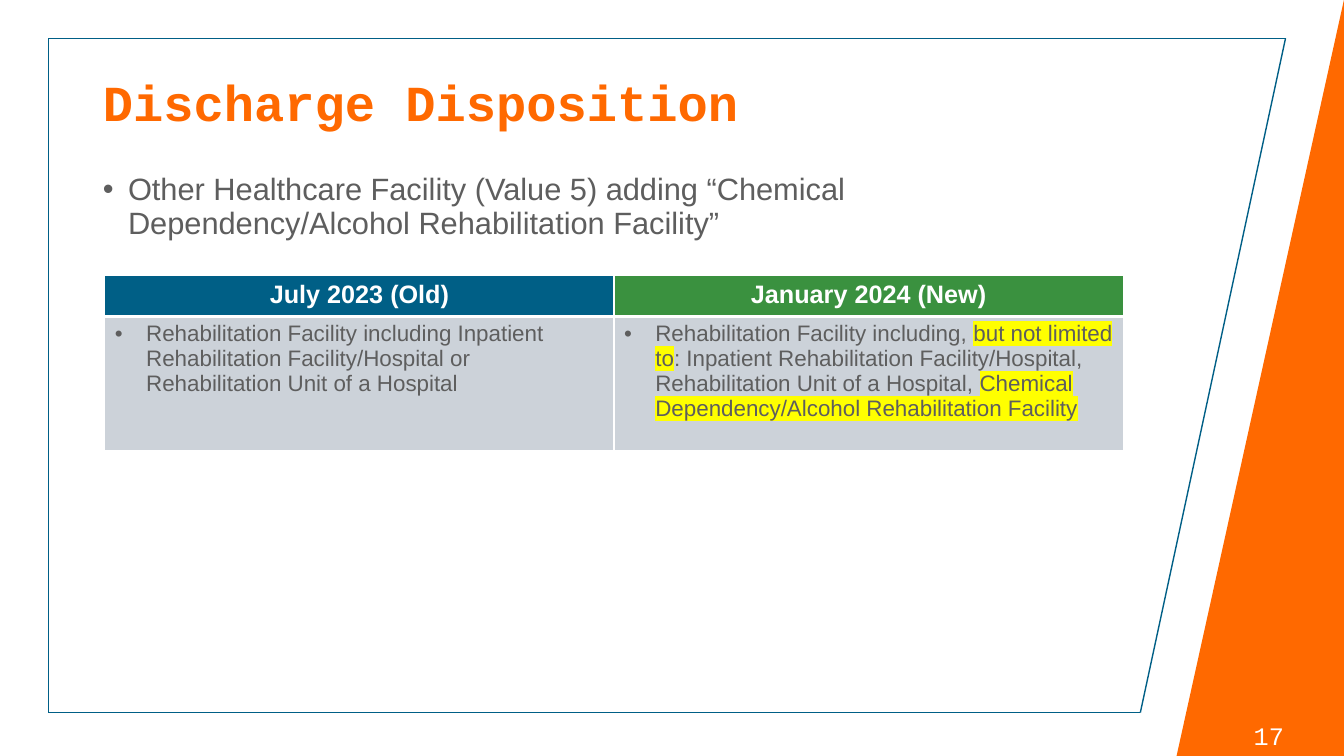
from dataclasses import dataclass

from lxml.etree import SubElement
from pptx import Presentation
from pptx.dml.color import RGBColor
from pptx.enum.shapes import MSO_CONNECTOR as Connector, MSO_SHAPE as Shape
from pptx.enum.text import MSO_ANCHOR as Anchor, PP_ALIGN as Align
from pptx.oxml import parse_xml
from pptx.oxml.ns import nsdecls, qn
from pptx.util import Inches, Pt


@dataclass(frozen=True)
class Theme:
    orange: str = "FF6900"
    blue: str = "005F86"
    green: str = "3A913F"
    gray: str = "5E5E5E"
    pale: str = "CCD2D9"
    white: str = "FFFFFF"
    yellow: str = "FFFF00"
    heading_font: str = "Courier New"
    text_font: str = "Arial"
    title_size: int = 36
    body_size: int = 22
    label_size: int = 18
    cell_size: int = 16


THEME = Theme()
FRAME_LINES = [
    ((0.48, 7.07), (11.31, 7.07)),
    ((0.48, 0.38), (12.75, 0.38)),
    ((0.48, 0.38), (0.48, 7.07)),
    ((12.75, 0.38), (11.31, 7.07)),
]
HEADERS = [("July 2023 (Old)", THEME.blue), ("January 2024 (New)", THEME.green)]
DEFINITIONS = [
    [("Rehabilitation Facility including Inpatient Rehabilitation "
      "Facility/Hospital or Rehabilitation Unit of a Hospital", False)],
    [("Rehabilitation Facility including, ", False),
     ("but not limited to", True),
     (": Inpatient Rehabilitation Facility/Hospital, Rehabilitation Unit of a Hospital, ", False),
     ("Chemical Dependency/Alcohol Rehabilitation Facility", True)],
]


def apply_format(target, values):
    for name, value in values.items():
        setattr(target, name, value)


def place(placeholder, left, top, width, height):
    apply_format(placeholder, {
        "left": Inches(left), "top": Inches(top),
        "width": Inches(width), "height": Inches(height),
    })


def write_run(paragraph, text, font, size, color, bold=False, highlighted=False):
    run = paragraph.add_run()
    run.text = text
    run.font.color.rgb = RGBColor.from_string(color)
    if highlighted:
        run.font.fill._xPr.find(qn("a:solidFill")).addnext(parse_xml(
            f'<a:highlight {nsdecls("a")}><a:srgbClr val="{THEME.yellow}"/></a:highlight>'))
    apply_format(run.font, {"name": font, "size": Pt(size), "bold": bold})


def add_bullet(paragraph, indent):
    properties = paragraph._p.get_or_add_pPr()
    properties.set("marL", str(Inches(indent)))
    properties.set("indent", str(-Inches(indent)))
    SubElement(properties, qn("a:buFont")).set("typeface", THEME.text_font)
    SubElement(properties, qn("a:buChar")).set("char", "•")


def add_side_wedge(slide):
    wedge = slide.shapes.add_shape(
        Shape.RIGHT_TRIANGLE, Inches(11.67), Inches(0), Inches(1.66), Inches(7.5))
    wedge.shadow.inherit = False
    wedge.fill.solid()
    wedge.fill.fore_color.rgb = RGBColor.from_string(THEME.orange)
    wedge.line.fill.background()
    wedge.element.spPr.xfrm.set("flipH", "1")


def add_frame_line(slide, start, end):
    edge = slide.shapes.add_connector(Connector.STRAIGHT, *map(Inches, start + end))
    edge.line.color.rgb = RGBColor.from_string(THEME.blue)
    edge.line.width = Pt(1)
    SubElement(edge.element.spPr, qn("a:effectLst"))


def add_page_number(slide, number):
    page_box = slide.shapes.add_textbox(Inches(12.22), Inches(7.1), Inches(0.73), Inches(0.4))
    apply_format(page_box.text_frame, {"word_wrap": True, "vertical_anchor": Anchor.MIDDLE})
    paragraph = page_box.text_frame.paragraphs[0]
    paragraph.alignment = Align.CENTER
    write_run(paragraph, number, THEME.heading_font, THEME.label_size, THEME.white)


def fill_title(title, text):
    place(title, 0.92, 0.4, 11.5, 1.28)
    title.text_frame.vertical_anchor = Anchor.MIDDLE
    paragraph = title.text_frame.paragraphs[0]
    apply_format(paragraph, {"alignment": Align.LEFT, "line_spacing": 0.9})
    write_run(paragraph, text, THEME.heading_font, THEME.title_size, THEME.orange, bold=True)


def fill_body(body, text):
    place(body, 0.92, 1.68, 10.34, 4.93)
    paragraph = body.text_frame.paragraphs[0]
    add_bullet(paragraph, 0.25)
    apply_format(paragraph, {"line_spacing": 0.9, "space_before": Pt(0)})
    write_run(paragraph, text, THEME.text_font, THEME.body_size, THEME.gray)


def style_cell(cell, color, top, bottom):
    properties = cell._tc.get_or_add_tcPr()
    for side, width in {"lnL": 1, "lnR": 1, "lnT": top, "lnB": bottom}.items():
        properties.append(parse_xml(
            f'<a:{side} {nsdecls("a")} w="{Pt(width)}"><a:solidFill>'
            f'<a:srgbClr val="{THEME.white}"/></a:solidFill></a:{side}>'))
    cell.fill.solid()
    cell.fill.fore_color.rgb = RGBColor.from_string(color)


def add_comparison(slide):
    table = slide.shapes.add_table(
        2, 2, Inches(1.04), Inches(2.73), Inches(10.1), Inches(1.74)).table
    for row, height in zip(table.rows, (0.41, 1.33)):
        row.height = Inches(height)
    for column, ((header, color), definition) in enumerate(zip(HEADERS, DEFINITIONS)):
        table.columns[column].width = Inches(5.05)
        header_cell, definition_cell = table.cell(0, column), table.cell(1, column)
        style_cell(header_cell, color, top=1, bottom=3)
        style_cell(definition_cell, THEME.pale, top=3, bottom=1)
        heading = header_cell.text_frame.paragraphs[0]
        heading.alignment = Align.CENTER
        write_run(heading, header, THEME.text_font, THEME.label_size, THEME.white, bold=True)
        item = definition_cell.text_frame.paragraphs[0]
        add_bullet(item, 0.31)
        for text, highlighted in definition:
            write_run(item, text, THEME.text_font, THEME.cell_size, THEME.gray,
                      highlighted=highlighted)


def main():
    deck = Presentation()
    apply_format(deck, {"slide_width": Inches(13.33), "slide_height": Inches(7.5)})
    slide = deck.slides.add_slide(deck.slide_layouts[1])
    add_side_wedge(slide)
    for start, end in FRAME_LINES:
        add_frame_line(slide, start, end)
    add_page_number(slide, "17")
    fill_title(slide.shapes.title, "Discharge Disposition")
    fill_body(slide.placeholders[1],
              "Other Healthcare Facility (Value 5) adding “Chemical "
              "Dependency/Alcohol Rehabilitation Facility”")
    add_comparison(slide)
    deck.save("out.pptx")


if __name__ == "__main__":
    main()
